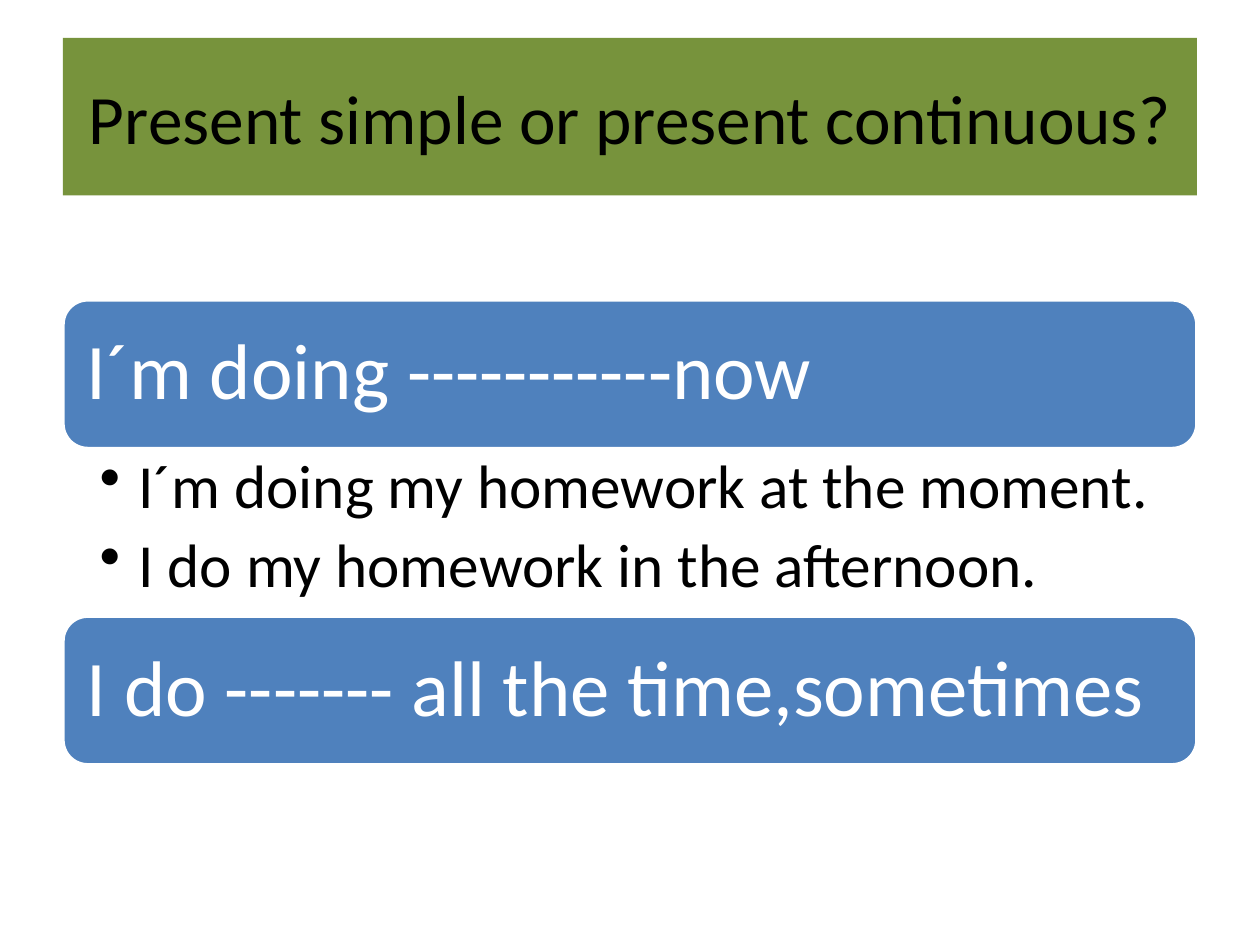
from dataclasses import dataclass

from lxml.etree import SubElement
from pptx import Presentation
from pptx.dml.color import RGBColor
from pptx.enum.shapes import MSO_SHAPE
from pptx.enum.text import MSO_ANCHOR, PP_ALIGN
from pptx.oxml.ns import qn
from pptx.util import Inches, Pt


@dataclass(frozen=True)
class Theme:
    """Colours, font and type sizes of the slide."""
    font: str = "Calibri"
    green: RGBColor = RGBColor(0x77, 0x93, 0x3C)
    blue: RGBColor = RGBColor(0x4F, 0x81, 0xBD)
    white: RGBColor = RGBColor(0xFF, 0xFF, 0xFF)
    black: RGBColor = RGBColor(0, 0, 0)
    title_size: float = 39.6
    heading_size: float = 45
    bullet_size: float = 35


THEME = Theme()
LEFT, WIDTH = 0.5, 9
BAR_TOP, BAR_HEIGHT, LIST_HEIGHT = 2.38, 1.18, 1.33


def write_text(paragraph, text, *, size, color, align=PP_ALIGN.LEFT, line_spacing=1.0, space_after=0):
    """Fill a paragraph with one formatted run."""
    paragraph.alignment = align
    paragraph.line_spacing = line_spacing
    paragraph.space_after = Pt(space_after)
    run = paragraph.add_run()
    run.text = text
    run.font.name = THEME.font
    run.font.size = Pt(size)
    run.font.color.rgb = color


def set_frame(shape, *, left=0.1, right=0.1, vertical=0.05, anchor=MSO_ANCHOR.MIDDLE):
    """Set wrapping, insets and anchor, and return the text frame."""
    frame = shape.text_frame
    frame.word_wrap = True
    frame.margin_left, frame.margin_right = Inches(left), Inches(right)
    frame.margin_top = frame.margin_bottom = Inches(vertical)
    frame.vertical_anchor = anchor
    return frame


def add_block(slide, kind, top, height, fill):
    """Add a full-width filled shape without shadow or outline."""
    shape = slide.shapes.add_shape(kind, Inches(LEFT), Inches(top), Inches(WIDTH), Inches(height))
    shape.shadow.inherit = False
    shape.fill.solid()
    shape.fill.fore_color.rgb = fill
    shape.line.fill.background()
    return shape


def add_title(slide, text):
    """Add the green title band."""
    shape = add_block(slide, MSO_SHAPE.RECTANGLE, 0.3, 1.25, THEME.green)
    write_text(set_frame(shape).paragraphs[0], text, size=THEME.title_size,
               color=THEME.black, align=PP_ALIGN.CENTER)


def add_heading_bar(slide, text, top):
    """Add a rounded blue bar with a white heading."""
    shape = add_block(slide, MSO_SHAPE.ROUNDED_RECTANGLE, top, BAR_HEIGHT, THEME.blue)
    shape.line.color.rgb = THEME.white
    shape.line.width = Pt(2)
    frame = set_frame(shape, left=0.13, right=0.13, vertical=0.13)
    write_text(frame.paragraphs[0], text, size=THEME.heading_size,
               color=THEME.white, line_spacing=0.9)


def add_bullet_list(slide, items, top):
    """Add a text box with one bulleted paragraph per item."""
    box = slide.shapes.add_textbox(Inches(LEFT), Inches(top), Inches(WIDTH), Inches(LIST_HEIGHT))
    frame = set_frame(box, left=0.29, right=0.35, vertical=0.06, anchor=MSO_ANCHOR.TOP)
    for index, item in enumerate(items):
        paragraph = frame.add_paragraph() if index else frame.paragraphs[0]
        write_text(paragraph, item, size=THEME.bullet_size, color=THEME.black,
                   line_spacing=0.9, space_after=7)
        properties = paragraph._p.get_or_add_pPr()
        properties.set("marL", str(Inches(0.31)))
        properties.set("indent", str(Inches(-0.31)))
        SubElement(properties, qn("a:buChar"), char="•")


def main():
    """Build the slide and save it."""
    presentation = Presentation()
    presentation.slide_width, presentation.slide_height = Inches(10), Inches(7.5)
    slide = presentation.slides.add_slide(presentation.slide_layouts[6])
    list_top = BAR_TOP + BAR_HEIGHT
    add_title(slide, "Present simple or present continuous?")
    add_heading_bar(slide, "I´m doing -----------now", BAR_TOP)
    add_bullet_list(slide, ["I´m doing my homework at the moment.",
                            "I do my homework in the afternoon."], list_top)
    add_heading_bar(slide, "I do ------- all the time,sometimes", list_top + LIST_HEIGHT)
    presentation.save("out.pptx")


if __name__ == "__main__":
    main()
